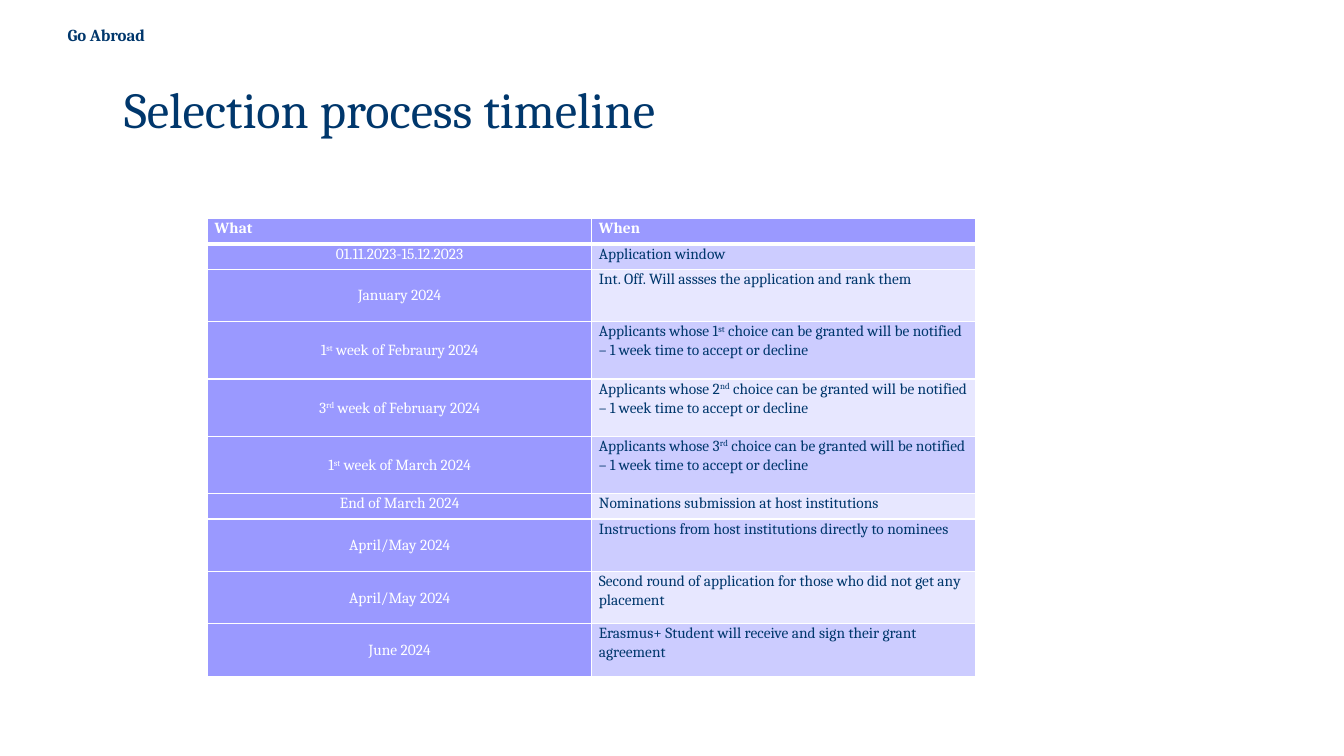
import dataclasses

import pptx
import pptx.dml.color
import pptx.enum.text
import pptx.oxml
import pptx.oxml.ns
import pptx.util

Inches = pptx.util.Inches
Pt = pptx.util.Pt
Align = pptx.enum.text.PP_ALIGN
Anchor = pptx.enum.text.MSO_ANCHOR

FONT = "Cambria"
NAVY = "00376C"
WHITE = "FFFFFF"
VIOLET = "9A99FF"
BANDS = ("CCCCFF", "E7E7FF")
SHORT, MEDIUM, TALL = 0.25, 0.52, 0.57


@dataclasses.dataclass(frozen=True)
class Step:
    """One table row; text between carets is superscript."""
    what: str
    when: str
    height: float


@dataclasses.dataclass(frozen=True)
class CellStyle:
    fill: str
    color: str
    bold: bool = False
    align: Align = Align.LEFT
    anchor: Anchor = Anchor.TOP
    top_line: float = 1
    bottom_line: float = 1


def choice(rank: str) -> str:
    return (f"Applicants whose {rank} choice can be granted will be notified "
            "– 1 week time to accept or decline")


HEADER = Step("What", "When", SHORT)
STEPS = [
    Step("01.11.2023-15.12.2023", "Application window", SHORT),
    Step("January 2024", "Int. Off. Will assses the application and rank them", MEDIUM),
    Step("1^st^ week of Febraury 2024", choice("1^st^"), TALL),
    Step("3^rd^ week of February 2024", choice("2^nd^"), TALL),
    Step("1^st^ week of March 2024", choice("3^rd^"), TALL),
    Step("End of March 2024", "Nominations submission at host institutions", SHORT),
    Step("April/May 2024", "Instructions from host institutions directly to nominees", MEDIUM),
    Step("April/May 2024",
         "Second round of application for those who did not get any placement", MEDIUM),
    Step("June 2024", "Erasmus+ Student will receive and sign their grant agreement", MEDIUM),
]


def rgb(value: str) -> pptx.dml.color.RGBColor:
    return pptx.dml.color.RGBColor.from_string(value)


def set_font(para, size: float, color: str, bold: bool = False) -> None:
    para.font.name = FONT
    para.font.size = Pt(size)
    para.font.bold = bold
    para.font.color.rgb = rgb(color)


def place(box, left: float, top: float, width: float, height: float,
          inset: float, anchor: Anchor) -> None:
    box.left, box.top = Inches(left), Inches(top)
    box.width, box.height = Inches(width), Inches(height)
    frame = box.text_frame
    frame.word_wrap = True
    frame.auto_size = pptx.enum.text.MSO_AUTO_SIZE.NONE
    frame.vertical_anchor = anchor
    frame.margin_left = Inches(inset)
    frame.margin_top = frame.margin_right = frame.margin_bottom = 0


def add_border(cell, side: str, width: float) -> None:
    namespace = pptx.oxml.ns.nsdecls("a")
    cell._tc.get_or_add_tcPr().append(pptx.oxml.parse_xml(
        f'<a:ln{side} {namespace} w="{Pt(width)}"><a:solidFill>'
        f'<a:srgbClr val="{WHITE}"/></a:solidFill></a:ln{side}>'))


def fill_cell(cell, text: str, style: CellStyle) -> None:
    for side, width in (("L", 1), ("R", 1), ("T", style.top_line), ("B", style.bottom_line)):
        add_border(cell, side, width)
    cell.fill.solid()
    cell.fill.fore_color.rgb = rgb(style.fill)
    cell.margin_left = cell.margin_right = Inches(0.07)
    cell.margin_top = cell.margin_bottom = 0
    cell.vertical_anchor = style.anchor
    para = cell.text_frame.paragraphs[0]
    para.alignment = style.align
    para.line_spacing = 1.07
    set_font(para, 11, style.color, style.bold)
    for index, part in enumerate(text.split("^")):
        span = para.add_run()
        span.text = part
        if index % 2:
            span._r.get_or_add_rPr().set("baseline", "30000")


def add_timeline(page) -> None:
    rows = [HEADER, *STEPS]
    table = page.shapes.add_table(
        len(rows), 2, Inches(2.06), Inches(2.17), Inches(7.62),
        Inches(sum(row.height for row in rows))).table
    for index, row in enumerate(rows):
        table.rows[index].height = Inches(row.height)
        if row is HEADER:
            what_style = when_style = CellStyle(VIOLET, WHITE, bold=True, bottom_line=3)
        else:
            top_line = 3 if index == 1 else 1
            anchor = Anchor.TOP if row.height == SHORT else Anchor.MIDDLE
            what_style = CellStyle(VIOLET, WHITE, align=Align.CENTER,
                                   anchor=anchor, top_line=top_line)
            when_style = CellStyle(BANDS[(index - 1) % 2], NAVY, top_line=top_line)
        fill_cell(table.cell(index, 0), row.what, what_style)
        fill_cell(table.cell(index, 1), row.when, when_style)


def main() -> None:
    deck = pptx.Presentation()
    deck.slide_width, deck.slide_height = Inches(13.33), Inches(7.5)
    page = deck.slides.add_slide(deck.slide_layouts.get_by_name("Title Only"))

    # Section label
    label = page.shapes.add_textbox(0, 0, 0, 0)
    place(label, 0, 0, 12.1, 0.69, 0.67, Anchor.MIDDLE)
    para = label.text_frame.paragraphs[0]
    para.text = "Go Abroad"
    set_font(para, 12, NAVY, bold=True)

    # Title
    title = page.shapes.title
    place(title, 1.23, 1.08, 10.87, 0.59, 0, Anchor.TOP)
    para = title.text_frame.paragraphs[0]
    para.text = "Selection process timeline"
    para.alignment = Align.LEFT
    para.line_spacing = Pt(21)
    set_font(para, 36, NAVY)

    # Timeline table
    add_timeline(page)
    deck.save("out.pptx")


if __name__ == "__main__":
    main()
